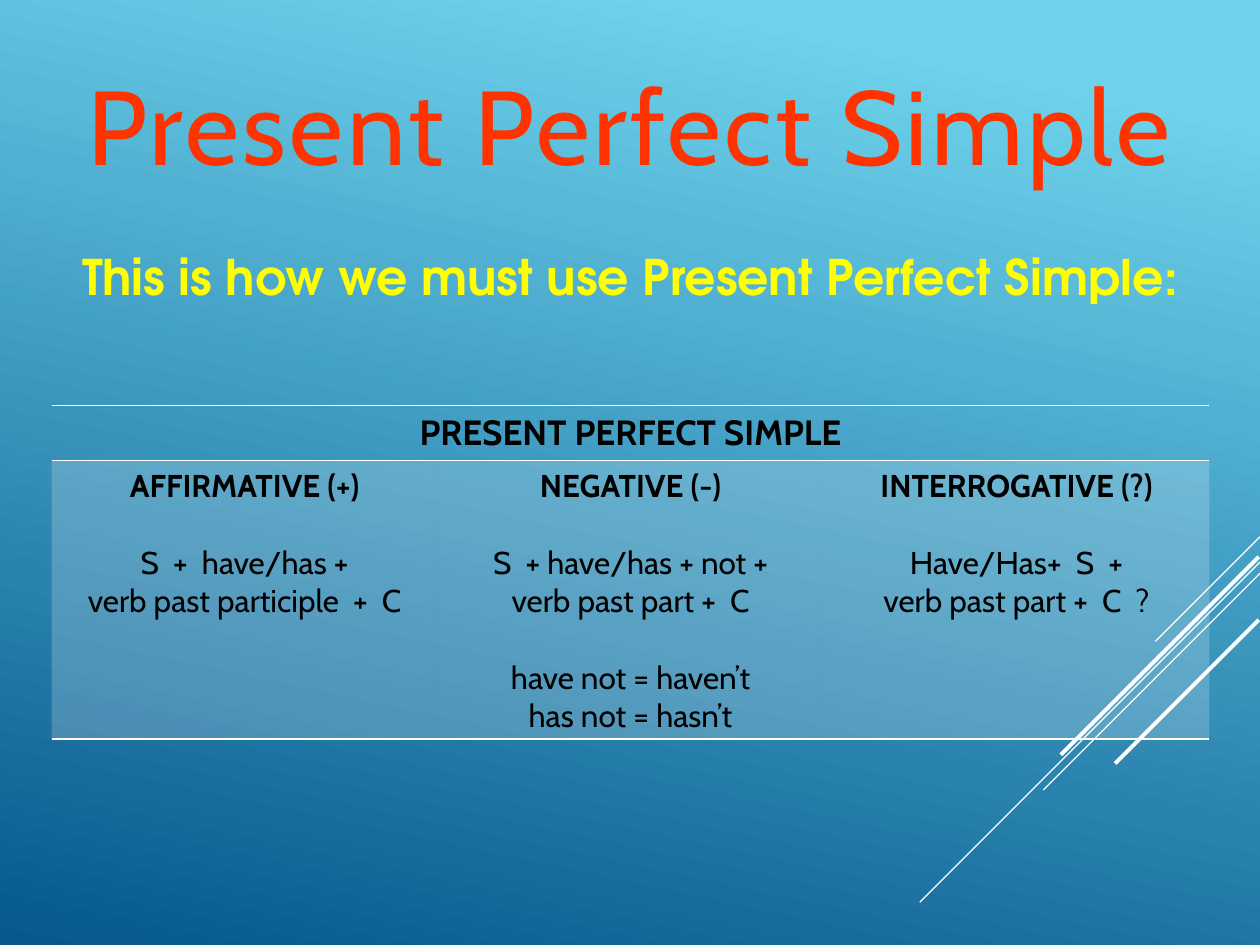
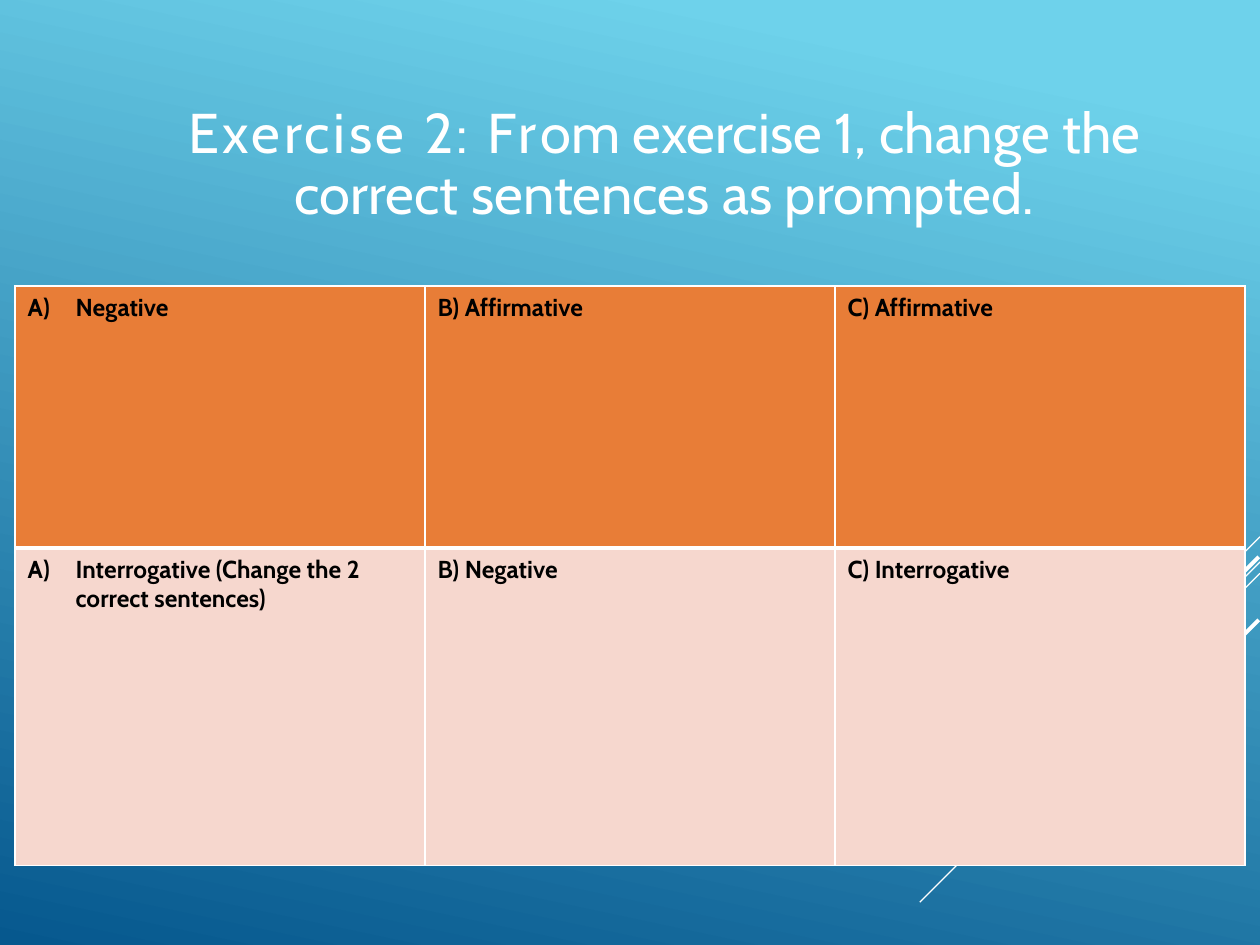
from dataclasses import dataclass
from typing import Optional

import lxml.etree
import pptx
import pptx.dml.color
import pptx.enum.shapes
import pptx.enum.text
import pptx.oxml
import pptx.oxml.ns
import pptx.util

RGB = pptx.dml.color.RGBColor
Pt = pptx.util.Pt
Align = pptx.enum.text.PP_ALIGN
Anchor = pptx.enum.text.MSO_ANCHOR
qn = pptx.oxml.ns.qn

# Colours and fonts
SKY, DEEP = RGB(0x6E, 0xD2, 0xEB), RGB(0x06, 0x58, 0x8E)
WHITE, BLACK = RGB(255, 255, 255), RGB(0, 0, 0)
RED, YELLOW = RGB(0xFF, 0x33, 0x00), RGB(255, 255, 0)
ORANGE, PINK = RGB(0xE8, 0x7D, 0x37), RGB(0xF6, 0xD7, 0xCE)
BODY, ROUND = "Cabin", "TeX Gyre Adventor"
NO_GRID = "{2D5ABB26-0587-4C30-8999-92F81FD0307C}"

# Grid of 100 columns by 75 rows
WIDE, TALL = pptx.util.Inches(10), pptx.util.Inches(7.5)


def col(n: float) -> int:
    return round(WIDE * n / 100)


def row(n: float) -> int:
    return round(TALL * n / 75)


@dataclass
class Box:
    x: float
    y: float
    w: float
    h: float

    def place(self) -> tuple[int, int, int, int]:
        return col(self.x), row(self.y), col(self.w), row(self.h)


@dataclass
class Streak:
    x: float
    y: float
    run: float
    weight: float


@dataclass
class Type:
    size: float
    color: RGB = BLACK
    face: str = BODY
    bold: bool = False
    align: Align = Align.CENTER


@dataclass
class Line:
    text: str
    type: Type
    gap: float = 0
    auto: bool = False


@dataclass
class Look:
    edges: dict[str, float]
    fill: Optional[RGB] = None
    alpha: int = 100


# Diagonal lines, each running down to the left at 45 degrees
STREAKS = [
    Streak(100, 42.6, 8.3, 0.75),
    Streak(100, 44.6, 27, 0.75),
    Streak(100, 45.5, 17.2, 0.75),
    Streak(99.9, 44.2, 15.7, 2.25),
    Streak(99.9, 49.2, 11.4, 2.25),
]


def style(para, kind: Type) -> None:
    para.alignment = kind.align
    font = para.font
    font.name, font.size, font.bold = kind.face, Pt(kind.size), kind.bold
    font.color.rgb = kind.color


def streak(slide, item: Streak) -> None:
    line = slide.shapes.add_connector(
        pptx.enum.shapes.MSO_CONNECTOR.STRAIGHT,
        col(item.x), row(item.y), col(item.x - item.run), row(item.y + item.run))
    line.line.color.rgb = WHITE
    line.line.width = Pt(item.weight)
    lxml.etree.SubElement(line._element.spPr, qn("a:effectLst"))


def start(deck):
    """Add a slide with the shared gradient and diagonal lines."""
    slide = deck.slides.add_slide(deck.slide_layouts[6])
    fill = slide.background.fill
    fill.gradient()
    fill.gradient_angle = 360 - 102
    for stop, color, at in zip(fill.gradient_stops, (SKY, DEEP), (0.1, 1)):
        stop.color.rgb = color
        stop.position = at
    for item in STREAKS:
        streak(slide, item)
    return slide


def label(slide, box: Box, kind: Type, *parts: tuple[str, int]):
    """Add one centred paragraph; each part is text and letter spacing."""
    frame = slide.shapes.add_textbox(*box.place()).text_frame
    frame.word_wrap = True
    para = frame.paragraphs[0]
    style(para, kind)
    for text, space in parts:
        run = para.add_run()
        run.text = text
        if space:
            run._r.get_or_add_rPr().set("spc", str(space * 100))
    return frame


def title(slide, box: Box, kind: Type, *parts: tuple[str, int]) -> None:
    frame = label(slide, box, kind, *parts)
    frame.vertical_anchor = Anchor.MIDDLE
    frame.paragraphs[0].line_spacing = 0.9
    frame.paragraphs[0].space_after = Pt(6)


def number(para) -> None:
    """Give a paragraph an automatic A) with a hanging indent."""
    props = para._p.get_or_add_pPr()
    hang = pptx.util.Inches(0.38)
    props.set("marL", str(hang))
    props.set("indent", str(-hang))
    mark = pptx.oxml.parse_xml(
        f'<a:buAutoNum {pptx.oxml.ns.nsdecls("a")} type="alphaUcParenR"/>')
    props.insert_element_before(mark, "a:tabLst", "a:defRPr", "a:extLst")


def dress(cell, look: Look) -> None:
    """Draw the cell's borders, then its fill."""
    props = cell._tc.get_or_add_tcPr()
    for side in "LRTB":
        width = look.edges.get(side, 0)
        edge = lxml.etree.SubElement(props, qn(f"a:ln{side}"), w=str(Pt(width)))
        if width:
            solid = lxml.etree.SubElement(edge, qn("a:solidFill"))
            lxml.etree.SubElement(solid, qn("a:srgbClr"), val=str(WHITE))
        else:
            lxml.etree.SubElement(edge, qn("a:noFill"))
    if look.fill is None:
        cell.fill.background()
        return
    cell.fill.solid()
    cell.fill.fore_color.rgb = look.fill
    if look.alpha < 100:
        color = props.find(qn("a:solidFill")).find(qn("a:srgbClr"))
        lxml.etree.SubElement(color, qn("a:alpha"), val=str(look.alpha * 1000))


def write(cell, lines: list[Line]) -> None:
    frame = cell.text_frame
    for i, line in enumerate(lines):
        para = frame.add_paragraph() if i else frame.paragraphs[0]
        para.text = line.text
        style(para, line.type)
        if line.gap:
            para.space_before = Pt(line.gap)
        if line.auto:
            number(para)


def grid(slide, box: Box, highs: list[float], looks: list[Look],
         cells: list[list[list[Line]]]):
    """Add a table of three equal columns with one look per row."""
    table = slide.shapes.add_table(len(highs), 3, *box.place()).table
    table.first_row = table.horz_banding = False
    table._tbl.tblPr.find(qn("a:tableStyleId")).text = NO_GRID
    for r, (high, look) in enumerate(zip(highs, looks)):
        table.rows[r].height = row(high)
        for c in range(3):
            dress(table.cell(r, c), look)
        for c, lines in enumerate(cells[r]):
            write(table.cell(r, c), lines)
    return table


# Slide 1: how the tense is formed
FORMS = [
    [["AFFIRMATIVE (+)"],
     ["S  +  have/has +", "verb past participle  +  C"]],
    [["NEGATIVE (-)"],
     ["S  + have/has + not +", "verb past part +  C"],
     ["have not = haven’t", "has not = hasn’t"]],
    [["INTERROGATIVE (?)"],
     ["Have/Has+  S  +", "verb past part +  C  ?"]],
]


def stack(blocks: list[list[str]]) -> list[Line]:
    """Bold first block; one line's height before each later block."""
    return [Line(text, Type(18, bold=b == 0), gap=22 if b and not i else 0)
            for b, block in enumerate(blocks) for i, text in enumerate(block)]


def rules(deck) -> None:
    slide = start(deck)
    title(slide, Box(0, 2.9, 100, 15.1), Type(60, RED),
          ("Present Perfect Simple", 2))
    label(slide, Box(0, 19.1, 100, 5.7), Type(28, YELLOW, ROUND, True),
          ("This is how we must use Present Perfect Simple:", 0))
    head = [Line("PRESENT PERFECT SIMPLE", Type(20, bold=True))]
    table = grid(slide, Box(4.1, 32.2, 91.9, 26.3), [4.3, 22],
                 [Look({"T": 1, "B": 1}), Look({"T": 1, "B": 1}, WHITE, 20)],
                 [[head], [stack(form) for form in FORMS]])
    table.cell(0, 0).merge(table.cell(0, 2))


# Slide 2: exercise
TASKS = [
    ["Negative", "B) Affirmative", "C) Affirmative"],
    ["Interrogative (Change the 2 correct sentences)",
     "B) Negative", "C) Interrogative"],
]


def drill(deck) -> None:
    slide = start(deck)
    title(slide, Box(8.5, 5.6, 88.5, 15.1), Type(32, WHITE),
          ("Exercise 2: Fr", 2),
          ("om exercise 1, change the correct sentences as prompted.", 0))
    kind = Type(14, bold=True, align=Align.LEFT)
    cells = [[[Line(text, kind, auto=c == 0)] for c, text in enumerate(tasks)]
             for tasks in TASKS]
    grid(slide, Box(1.2, 22.7, 97.6, 46), [20.8, 25.2],
         [Look({"L": 1, "R": 1, "T": 1, "B": 3}, ORANGE),
          Look({"L": 1, "R": 1, "T": 3, "B": 1}, PINK)], cells)


def main() -> None:
    deck = pptx.Presentation()
    deck.slide_width, deck.slide_height = WIDE, TALL
    rules(deck)
    drill(deck)
    deck.save("out.pptx")


if __name__ == "__main__":
    main()
